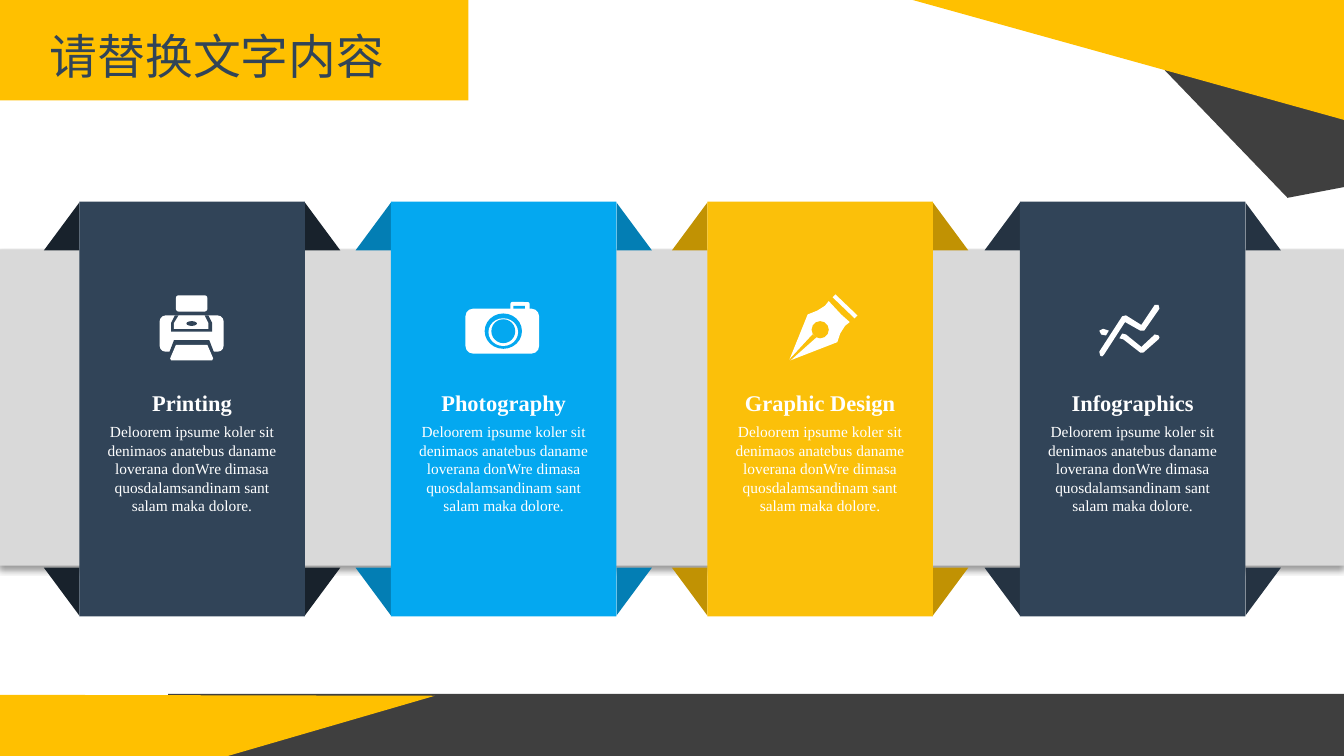
from lxml.etree import SubElement
from pptx import Presentation
from pptx.dml.color import RGBColor
from pptx.enum.shapes import MSO_SHAPE
from pptx.enum.text import MSO_ANCHOR, PP_ALIGN
from pptx.oxml.ns import qn
from pptx.util import Inches, Pt

COLOURS = {
    "amber": "FFC000", "charcoal": "3F3F3F", "band": "D9D9D9", "white": "FFFFFF",
    "navy": "314458", "navy fold": "18222C", "slate fold": "253342",
    "blue": "04A8F0", "blue fold": "037EB4",
    "gold": "FBC00A", "gold fold": "C19203",
}
SERIF, SANS = "Times New Roman", "Noto Sans CJK SC"
RECT, ROUNDED = MSO_SHAPE.RECTANGLE, MSO_SHAPE.ROUNDED_RECTANGLE
OVAL, TRIANGLE = MSO_SHAPE.OVAL, MSO_SHAPE.RIGHT_TRIANGLE


class SlideBuilder:
    """Draws styled elements on one slide; all lengths are in inches."""

    def __init__(self, slide):
        self.slide = slide
        self.shapes = slide.shapes

    def colour(self, name):
        return RGBColor.from_string(COLOURS[name])

    def paint(self, shape, fill):
        shape.shadow.inherit = False
        shape.fill.solid()
        shape.fill.fore_color.rgb = self.colour(fill)
        shape.line.fill.background()
        return shape

    def preset(self, kind, box, fill, flip=""):
        shape = self.shapes.add_shape(kind, *map(Inches, box))
        for axis in flip:
            shape._element.spPr.get_or_add_xfrm().set("flip" + axis, "1")
        return self.paint(shape, fill)

    def polygon(self, points, fill):
        start, *rest = [(Inches(x), Inches(y)) for x, y in points]
        outline = self.shapes.build_freeform(*start, scale=1.0)
        outline.add_line_segments(rest, close=True)
        return self.paint(outline.convert_to_shape(), fill)

    def drop_shadow(self, shape, blur, distance, alpha):
        effects = shape._element.spPr.find(qn("a:effectLst"))
        shadow = SubElement(effects, qn("a:outerShdw"), blurRad=str(Pt(blur)),
                            dist=str(Pt(distance)), dir="5400000", rotWithShape="0")
        black = SubElement(shadow, qn("a:srgbClr"), val="000000")
        SubElement(black, qn("a:alpha"), val=str(alpha * 1000))

    def set_text(self, frame, lines, colour, frame_format, paragraph_format, font_format):
        for name, value in frame_format.items():
            setattr(frame, name, value)
        for index, line in enumerate(lines):
            paragraph = frame.add_paragraph() if index else frame.paragraphs[0]
            for name, value in paragraph_format.items():
                setattr(paragraph, name, value)
            run = paragraph.add_run()
            run.text = line
            for name, value in font_format.items():
                setattr(run.font, name, value)
            run.font.color.rgb = self.colour(colour)
            SubElement(run.font._element, qn("a:ea"), typeface=font_format["name"])

    def title(self, text, box):
        heading = self.shapes.title
        for name, value in zip(("left", "top", "width", "height"), box):
            setattr(heading, name, Inches(value))
        self.set_text(heading.text_frame, [text], "navy",
                      {"word_wrap": True, "vertical_anchor": MSO_ANCHOR.MIDDLE},
                      {"alignment": PP_ALIGN.LEFT, "line_spacing": 1.0},
                      {"name": SANS, "size": Pt(36)})
        # Bring the title in front of its banner
        self.shapes._spTree.append(heading._element)

    def caption(self, lines, box, size, bold=False, spacing=1.0):
        frame = self.shapes.add_textbox(*map(Inches, box)).text_frame
        self.set_text(frame, lines, "white", {"word_wrap": True},
                      {"alignment": PP_ALIGN.CENTER, "line_spacing": spacing},
                      {"name": SERIF, "size": Pt(size), "bold": bold})

    def icon(self, parts, panel):
        for kind, ink, geometry in parts:
            fill = panel if ink == "panel" else ink
            if kind == "polygon":
                self.polygon(geometry, fill)
            else:
                self.preset(kind, geometry, fill)

    def card(self, left, panel, fold, heading, icon):
        for top, flip in ((2.12, ""), (5.94, "V")):
            self.preset(TRIANGLE, (left - FOLD_W, top, FOLD_W, FOLD_H), fold, "H" + flip)
            self.preset(TRIANGLE, (left + CARD_W, top, FOLD_W, FOLD_H), fold, flip)
        self.preset(RECT, (left, 2.11, CARD_W, 4.34), panel)
        self.caption([heading], (left, 3.88, CARD_W, 0.48), 16.9, True, 1.5)
        self.caption(DESCRIPTION, (left, 4.37, CARD_W, 1.08), 11.6)
        self.icon(icon, panel)


CARD_W, FOLD_W, FOLD_H = 2.36, 0.37, 0.5
DESCRIPTION = [
    "Deloorem ipsume koler sit denimaos anatebus daname loverana donWre dimasa "
    "quosdalamsandinam sant",
    "salam maka dolore.",
]

# Icon parts from back to front: kind, ink, geometry
PRINTER = [
    (ROUNDED, "white", (1.84, 3.09, 0.33, 0.17)),
    (ROUNDED, "white", (1.67, 3.3, 0.67, 0.38)),
    ("polygon", "panel", [(1.83, 3.3), (2.18, 3.3), (2.22, 3.38), (2.22, 3.47),
                          (1.79, 3.47), (1.79, 3.38)]),
    ("polygon", "white", [(1.87, 3.3), (2.14, 3.3), (2.18, 3.38), (2.18, 3.44),
                          (1.82, 3.44), (1.82, 3.38)]),
    (OVAL, "panel", (1.95, 3.36, 0.11, 0.05)),
    ("polygon", "panel", [(1.77, 3.69), (1.82, 3.56), (2.19, 3.56), (2.24, 3.69)]),
    ("polygon", "white", [(1.84, 3.61), (2.17, 3.61), (2.23, 3.75), (2.22, 3.77),
                          (1.79, 3.77), (1.78, 3.75)]),
]
CAMERA = [
    (ROUNDED, "white", (5.34, 3.16, 0.2, 0.12)),
    (ROUNDED, "white", (4.87, 3.23, 0.77, 0.47)),
    (RECT, "panel", (5.37, 3.2, 0.12, 0.03)),
    (OVAL, "panel", (5.07, 3.28, 0.39, 0.37)),
    (OVAL, "white", (5.11, 3.33, 0.31, 0.29)),
    (OVAL, "panel", (5.14, 3.34, 0.25, 0.25)),
]
PEN = [
    ("polygon", "white", [(8.8, 3.29), (8.67, 3.15), (8.63, 3.2), (8.55, 3.25),
                          (8.45, 3.29), (8.26, 3.76), (8.27, 3.77), (8.76, 3.58),
                          (8.79, 3.49), (8.84, 3.41), (8.89, 3.37)]),
    (OVAL, "panel", (8.49, 3.36, 0.18, 0.18)),
    ("polygon", "panel", [(8.26, 3.76), (8.5, 3.5), (8.54, 3.53), (8.27, 3.77)]),
    ("polygon", "white", [(8.74, 3.08), (8.97, 3.3), (8.94, 3.33), (8.71, 3.11)]),
]
GRAPH = [
    ("polygon", "white", [(11.77, 3.37), (11.93, 3.46), (11.97, 3.46), (12.13, 3.23),
                          (12.12, 3.19), (12.08, 3.19), (11.94, 3.4), (11.78, 3.3),
                          (11.74, 3.31), (11.5, 3.68), (11.51, 3.72), (11.53, 3.73),
                          (11.55, 3.71)]),
    ("polygon", "white", [(12.08, 3.5), (11.94, 3.63), (11.78, 3.5), (11.74, 3.49),
                          (11.71, 3.54), (11.75, 3.55), (11.93, 3.69), (11.96, 3.69),
                          (12.12, 3.55), (12.13, 3.53), (12.12, 3.51)]),
    ("polygon", "white", [(11.52, 3.5), (11.57, 3.51), (11.6, 3.46), (11.54, 3.44),
                          (11.5, 3.46)]),
]
CARDS = [
    (0.83, "navy", "navy fold", "Printing", PRINTER),
    (4.09, "blue", "blue fold", "Photography", CAMERA),
    (7.4, "gold", "gold fold", "Graphic Design", PEN),
    (10.67, "navy", "slate fold", "Infographics", GRAPH),
]


def main():
    deck = Presentation()
    deck.slide_width, deck.slide_height = Inches(14.06), Inches(7.91)
    page = SlideBuilder(deck.slides.add_slide(deck.slide_layouts[5]))

    # Title banner
    page.preset(RECT, (-0.02, 0, 4.92, 1.05), "amber")
    page.title("请替换文字内容", (0.42, 0.22, 5.65, 0.71))

    # Footer and corner decoration
    page.preset(RECT, (1.76, 7.26, 12.32, 0.67), "charcoal")
    page.polygon([(12.18, 0.73), (13.47, 2.07), (15.78, 1.63)], "charcoal")
    page.preset(TRIANGLE, (9.44, -0.03, 4.64, 1.29), "amber", "HV")
    page.polygon([(0, 7.27), (4.55, 7.28), (2.35, 7.92), (0, 7.93)], "amber")

    # Grey band behind the cards
    band = page.preset(RECT, (0, 2.61, 14.06, 3.31), "band")
    page.drop_shadow(band, blur=4, distance=3, alpha=40)

    # Folded cards
    for card in CARDS:
        page.card(*card)

    deck.save("out.pptx")


if __name__ == "__main__":
    main()
